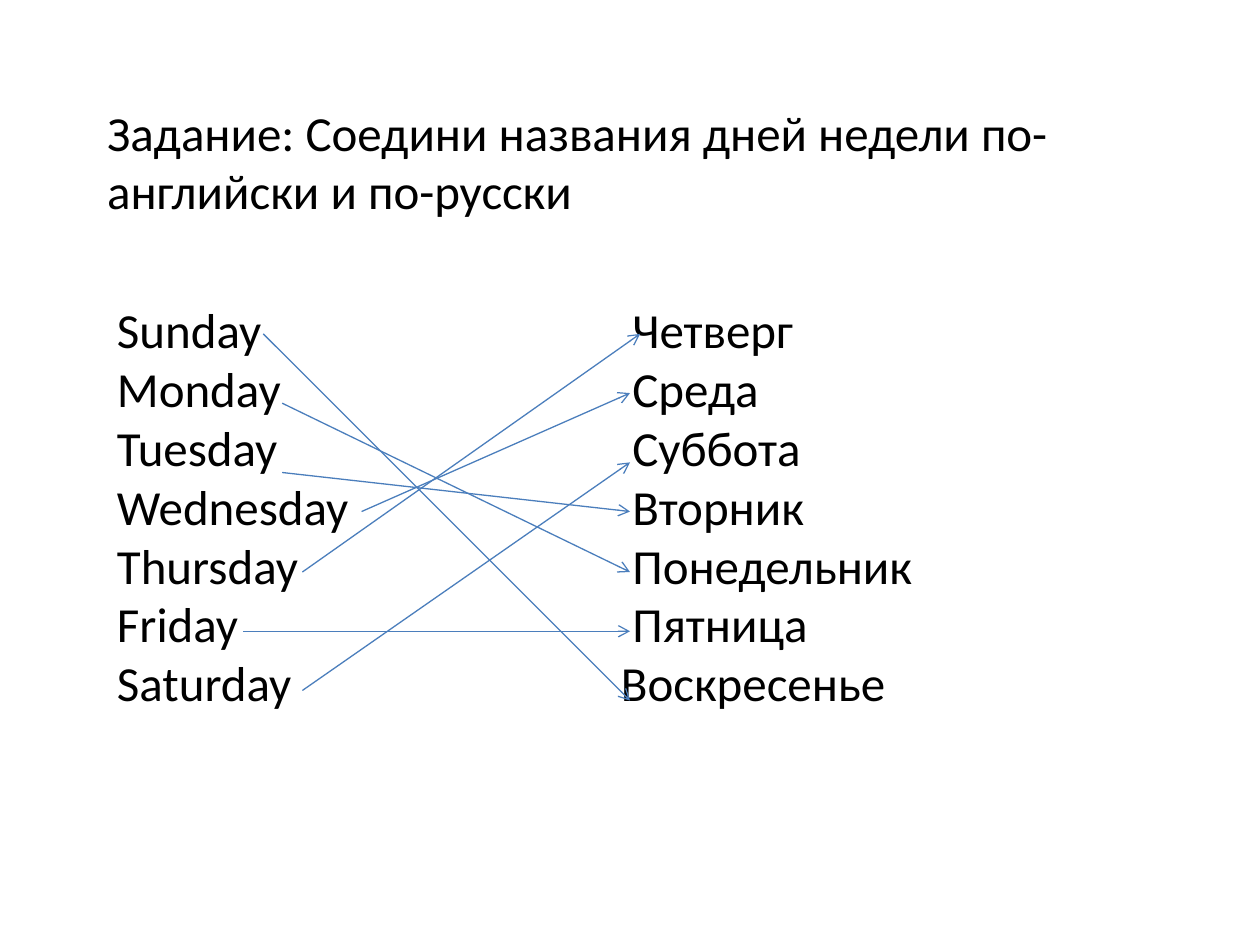
"""Build a matching exercise on the days of the week in English and Russian."""
from dataclasses import dataclass

from lxml.etree import SubElement
from pptx import Presentation
from pptx.dml.color import RGBColor
from pptx.enum.shapes import MSO_CONNECTOR as Connector
from pptx.enum.text import MSO_ANCHOR as Anchor, MSO_AUTO_SIZE as AutoSize, PP_ALIGN as Align
from pptx.oxml.ns import qn
from pptx.util import Inches, Pt

BLACK = RGBColor(0x00, 0x00, 0x00)
BLUE = RGBColor(0x4B, 0x7E, 0xBC)
FONT = "Calibri"


@dataclass(frozen=True)
class DayRow:
    english: str
    russian: str
    russian_indent: float = 4.09


@dataclass(frozen=True)
class Match:
    start: tuple[float, float]
    end: tuple[float, float]


TASK = "Задание: Соедини названия дней недели по- английски и по-русски"
ROWS = [
    DayRow("Sunday", "Четверг"),
    DayRow("Monday", "Среда"),
    DayRow("Tuesday", "Cуббота"),
    DayRow("Wednesday", "Вторник"),
    DayRow("Thursday", "Понедельник"),
    DayRow("Friday", "Пятница"),
    DayRow("Saturday", "Воскресенье", 4),
]
MATCHES = [
    Match((2.09, 2.65), (5, 5.56)),
    Match((2.24, 3.2), (5, 4.54)),
    Match((2.24, 3.75), (5, 4.06)),
    Match((2.87, 4.06), (5, 3.12)),
    Match((2.4, 4.54), (5.08, 2.65)),
    Match((1.93, 5.01), (5, 5.01)),
    Match((2.4, 5.48), (5, 3.67)),
]


def place(box, left: float, top: float, width: float, height: float) -> None:
    box.left, box.top = Inches(left), Inches(top)
    box.width, box.height = Inches(width), Inches(height)


def format_frame(frame) -> None:
    frame.word_wrap = True
    frame.auto_size = AutoSize.NONE
    frame.vertical_anchor = Anchor.TOP


def add_span(para, text: str) -> None:
    para.alignment = Align.LEFT
    span = para.add_run()
    span.text = text
    span.font.name = FONT
    span.font.size = Pt(28)
    span.font.color.rgb = BLACK


def add_title(page) -> None:
    title = page.shapes.title
    place(title, 0.75, 0.76, 8.74, 1.95)
    format_frame(title.text_frame)
    add_span(title.text_frame.paragraphs[0], TASK)


def add_days(page, rows: list[DayRow]) -> None:
    box = page.shapes.add_textbox(Inches(0.83), Inches(2.33), Inches(8.58), Inches(3.4))
    frame = box.text_frame
    format_frame(frame)
    for index, row in enumerate(rows):
        para = frame.add_paragraph() if index else frame.paragraphs[0]
        add_span(para, f"{row.english}\t{row.russian}")
        stops = SubElement(para._p.get_or_add_pPr(), qn("a:tabLst"))
        SubElement(stops, qn("a:tab"), pos=str(Inches(row.russian_indent)), algn="l")


def add_arrow(page, match: Match) -> None:
    ends = [Inches(value) for value in (*match.start, *match.end)]
    arrow = page.shapes.add_connector(Connector.STRAIGHT, *ends)
    arrow.line.color.rgb = BLUE
    arrow.line.width = Pt(0.75)
    SubElement(arrow.line._get_or_add_ln(), qn("a:tailEnd"), type="arrow")
    SubElement(arrow._element.spPr, qn("a:effectLst"))


def main() -> None:
    deck = Presentation()
    deck.slide_width, deck.slide_height = Inches(10), Inches(7.5)
    page = deck.slides.add_slide(deck.slide_layouts.get_by_name("Title Only"))
    add_title(page)
    add_days(page, ROWS)
    for match in MATCHES:
        add_arrow(page, match)
    deck.save("out.pptx")


if __name__ == "__main__":
    main()
